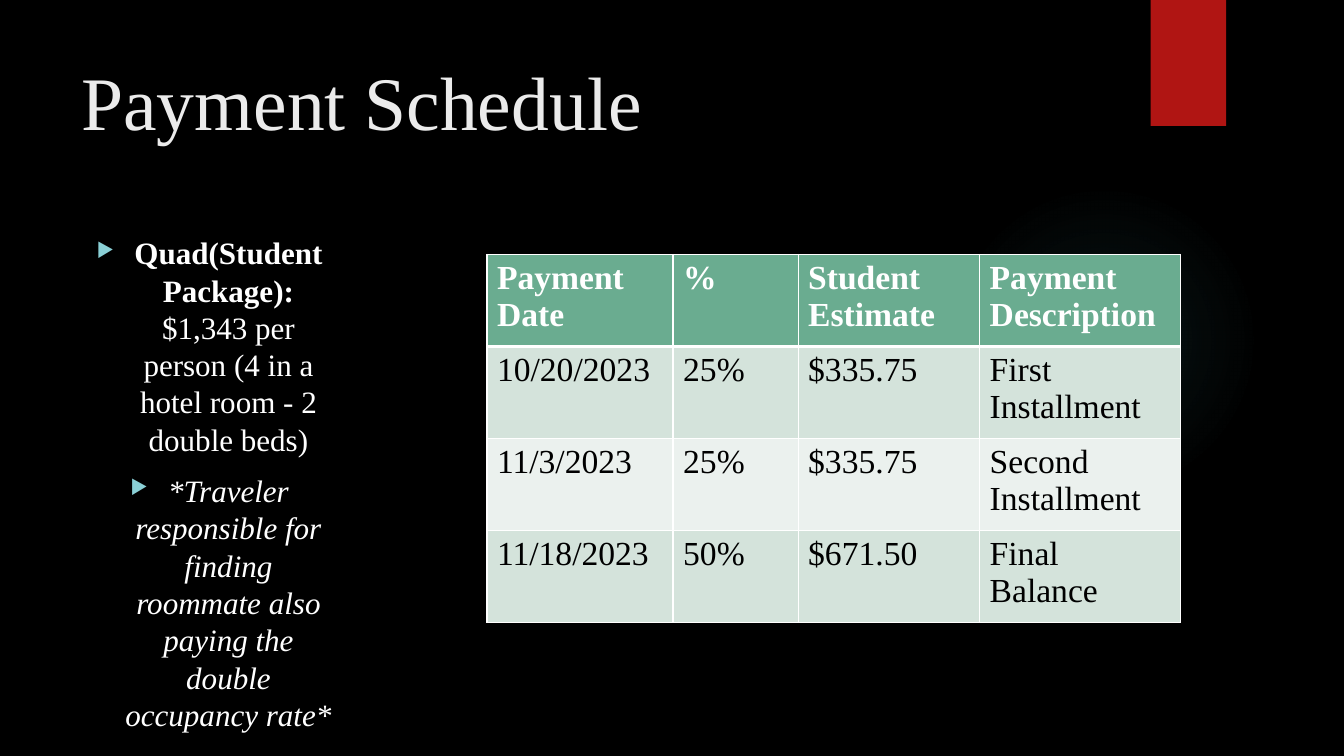
from lxml.etree import SubElement
from pptx import Presentation
from pptx.dml.color import RGBColor
from pptx.enum.shapes import MSO_SHAPE
from pptx.enum.text import PP_ALIGN
from pptx.oxml import parse_xml
from pptx.oxml.ns import nsdecls, qn
from pptx.util import Pt

FONT = "Times New Roman"
COLORS = {
    "background": "000000",
    "glow": "50B9C1",
    "ribbon": "B01513",
    "title": "EBEBEB",
    "white": "FFFFFF",
    "black": "000000",
    "bullet": "8AD0D6",
    "header": "6AAC90",
    "odd_row": "D4E3DB",
    "even_row": "EBF1EE",
}


def color(name):
    return RGBColor.from_string(COLORS[name])


def add_text(para, text, size, fill, bold=False, italic=False):
    span = para.add_run()
    span.text = text
    span.font.name = FONT
    span.font.size = Pt(size)
    span.font.bold = bold
    span.font.italic = italic
    span.font.color.rgb = color(fill)


deck = Presentation()
deck.slide_width, deck.slide_height = Pt(960), Pt(540)
page = deck.slides.add_slide(deck.slide_layouts[6])
page.background.fill.solid()
page.background.fill.fore_color.rgb = color("background")

# Soft glow behind the table
glow = page.shapes.add_shape(MSO_SHAPE.OVAL, Pt(677.5), Pt(131.8), Pt(221.8), Pt(221.8))
glow.shadow.inherit = False
glow.line.fill.background()
stops = "".join(
    f'<a:gs pos="{position * 1000}"><a:srgbClr val="{COLORS["glow"]}">'
    f'<a:alpha val="{opacity * 1000}"/></a:srgbClr></a:gs>'
    for position, opacity in [(0, 7), (36, 6), (69, 0), (100, 0)]
)
gradient = parse_xml(
    f'<a:gradFill {nsdecls("a")} rotWithShape="1"><a:gsLst>{stops}</a:gsLst>'
    '<a:path path="circle"><a:fillToRect l="50000" t="50000" r="50000" b="50000"/>'
    "</a:path></a:gradFill>"
)
glow.element.spPr.find(qn("a:prstGeom")).addnext(gradient)

ribbon = page.shapes.add_shape(MSO_SHAPE.RECTANGLE, Pt(822), 0, Pt(53.8), Pt(90))
ribbon.shadow.inherit = False
ribbon.fill.solid()
ribbon.fill.fore_color.rgb = color("ribbon")
ribbon.line.fill.background()

# Title
title_box = page.shapes.add_textbox(Pt(51.1), Pt(36), Pt(741), Pt(110))
title_box.text_frame.word_wrap = True
add_text(title_box.text_frame.paragraphs[0], "Payment Schedule", size=54, fill="title")

# Package notes: each paragraph is a list of (text, format) spans
notes = [
    [
        ("Quad(Student Package): ", {"bold": True}),
        ("$1,343 per person (4 in a hotel room - 2 double beds)", {}),
    ],
    [
        (
            "*Traveler responsible for finding roommate also paying the double occupancy rate*",
            {"italic": True},
        )
    ],
]
notes_box = page.shapes.add_textbox(Pt(51.1), Pt(163.4), Pt(197.3), Pt(330.5))
notes_frame = notes_box.text_frame
notes_frame.word_wrap = True
for index, spans in enumerate(notes):
    para = notes_frame.add_paragraph() if index else notes_frame.paragraphs[0]
    para.alignment = PP_ALIGN.CENTER
    if index:
        para.space_before = Pt(10)
    properties = para._p.get_or_add_pPr()
    properties.set("marL", str(Pt(27)))
    properties.set("indent", str(-Pt(27)))
    bullet_color = SubElement(properties, qn("a:buClr"))
    SubElement(bullet_color, qn("a:srgbClr"), val=COLORS["bullet"])
    SubElement(properties, qn("a:buSzPct"), val="64000")
    SubElement(properties, qn("a:buChar"), char="▶")
    for text, style in spans:
        add_text(para, text, size=22.2, fill="white", **style)

# Payment table
rows = [
    ["Payment Date", "%", "Student Estimate", "Payment Description"],
    ["10/20/2023", "25%", "$335.75", "First Installment"],
    ["11/3/2023", "25%", "$335.75", "Second Installment"],
    ["11/18/2023", "50%", "$671.50", "Final Balance"],
]
column_widths = [133, 89.3, 129.7, 143.4]
row_height = 65.7
table = page.shapes.add_table(
    len(rows), len(column_widths), Pt(347.8), Pt(181.8),
    Pt(sum(column_widths)), Pt(row_height * len(rows)),
).table
for column, width in zip(table.columns, column_widths):
    column.width = Pt(width)
for row_index, values in enumerate(rows):
    table.rows[row_index].height = Pt(row_height)
    is_header = row_index == 0
    row_fill = "header" if is_header else "odd_row" if row_index % 2 else "even_row"
    for column_index, value in enumerate(values):
        cell = table.cell(row_index, column_index)
        cell_properties = cell._tc.get_or_add_tcPr()
        for side in ("L", "R", "T", "B"):
            is_rule = (row_index, side) in [(0, "B"), (1, "T")]
            border = SubElement(
                cell_properties, qn(f"a:ln{side}"), w=str(Pt(3 if is_rule else 1))
            )
            border_fill = SubElement(border, qn("a:solidFill"))
            SubElement(border_fill, qn("a:srgbClr"), val=COLORS["white"])
        cell.fill.solid()
        cell.fill.fore_color.rgb = color(row_fill)
        add_text(
            cell.text_frame.paragraphs[0], value, size=24,
            fill="white" if is_header else "black", bold=is_header,
        )

deck.save("out.pptx")
